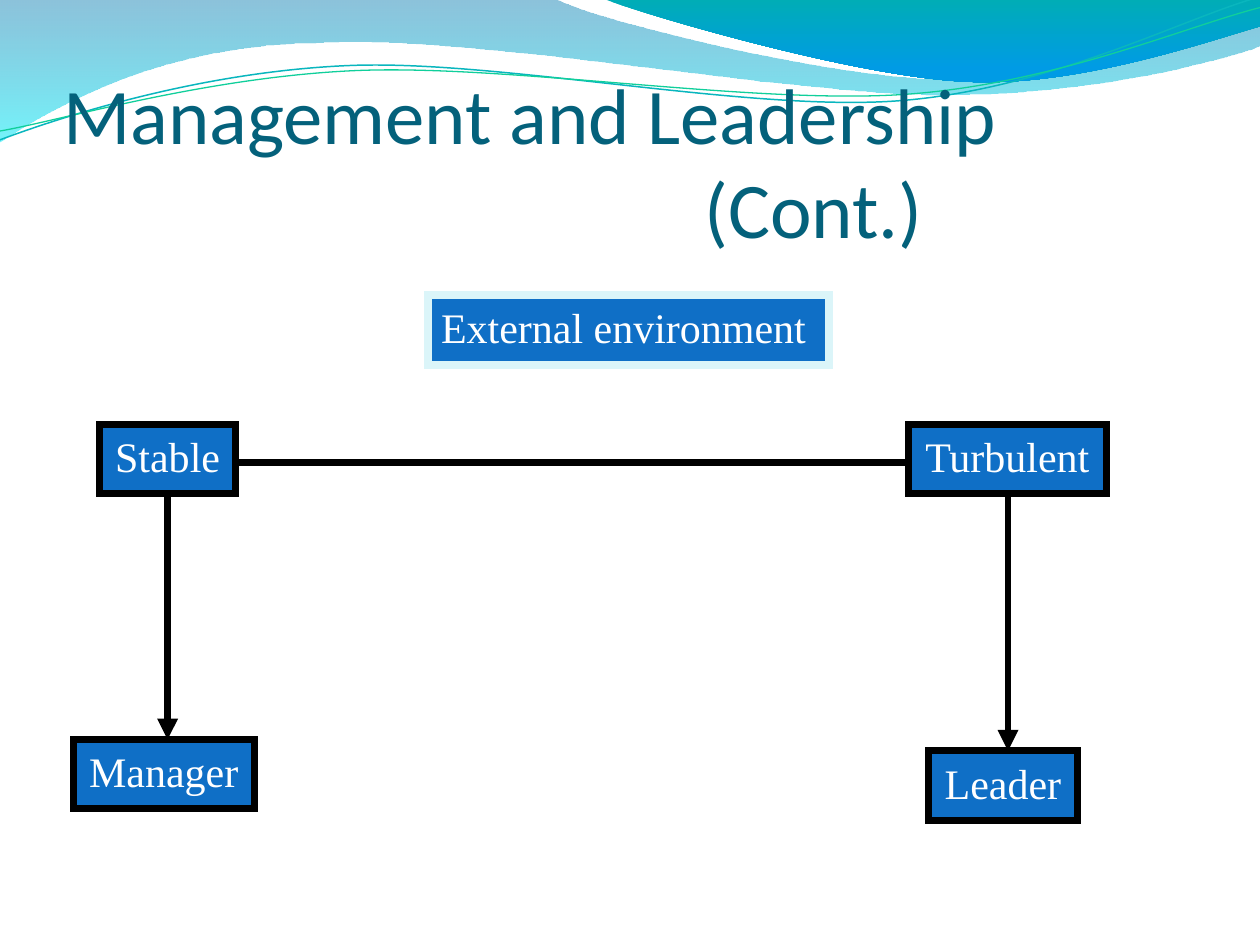
import math
from dataclasses import dataclass

from lxml import etree
from pptx import Presentation, util as u
from pptx.dml.color import RGBColor
from pptx.enum import shapes, text
from pptx.oxml.ns import qn

PX = u.Inches(1) // 100  # 100 px to the inch


@dataclass(frozen=True)
class Theme:
    title: str = "04617B"
    box: str = "0F6FC6"
    pale: str = "DBF5F9"
    ink: str = "000000"
    white: str = "FFFFFF"
    title_font: str = "Calibri"
    box_font: str = "Times New Roman"
    title_size: int = 45
    box_size: int = 24
    line: float = 4


def write(paragraph, content, *, font, size, color, align=text.PP_ALIGN.LEFT):
    paragraph.alignment = align
    run = paragraph.add_run()
    run.text = content
    run.font.name, run.font.size = font, u.Pt(size)
    run.font.color.rgb = RGBColor.from_string(color)


def turn(points, center, degrees):
    """Rotate points clockwise about a center."""
    cx, cy = center
    cos, sin = math.cos(math.radians(degrees)), math.sin(math.radians(degrees))
    return [(cx + (x - cx) * cos - (y - cy) * sin,
             cy + (x - cx) * sin + (y - cy) * cos) for x, y in points]


class SlideBuilder:
    def __init__(self, slide, theme):
        self.slide, self.theme = slide, theme

    def outline(self, points, kinds, closed):
        """Kinds follow the start point: L takes one point, C takes three."""
        points = [(round(x * PX), round(y * PX)) for x, y in points]
        builder = self.slide.shapes.build_freeform(*points[0], scale=1.0)
        builder.add_line_segments(points[1:], close=closed)
        shape = builder.convert_to_shape()
        shape.shadow.inherit = False
        segments = iter(list(shape._element.iter(qn("a:lnTo"))))
        for kind in kinds:
            segment = next(segments)
            if kind == "C":
                segment.tag = qn("a:cubicBezTo")
                for _ in range(2):
                    extra = next(segments)
                    segment.append(extra[0])
                    extra.getparent().remove(extra)
        return shape

    def wave(self, points, kinds, stops):
        """Stops are (position, color, opacity percent)."""
        shape = self.outline(points, kinds, True)
        shape.line.fill.background()
        shape.fill.gradient()
        shape.fill.gradient_angle = 270
        for stop, (position, color, _) in zip(shape.fill.gradient_stops, stops):
            stop.position = position
            stop.color.rgb = RGBColor.from_string(color)
        for color_xml, (_, _, opacity) in zip(
                shape._element.spPr.iter(qn("a:srgbClr")), stops):
            if opacity < 100:
                etree.SubElement(color_xml, qn("a:alpha"), val=str(opacity * 1000))

    def strand(self, points, center, color, width, tilt=-2.7):
        shape = self.outline(turn(points, center, -tilt), "CCC", False)
        shape.rotation = tilt
        shape.fill.background()
        self.stroke(shape, color, width)

    def stroke(self, shape, color, width):
        shape.line.color.rgb = RGBColor.from_string(color)
        shape.line.width = u.Pt(width)

    def title(self, first, second, tab):
        title = self.slide.shapes.title
        title._element.getparent().append(title._element)  # in front of the waves
        title.left, title.top, title.width, title.height = (
            n * PX for n in (50, 77, 908, 125))
        frame = title.text_frame
        frame.word_wrap = True
        frame.auto_size = text.MSO_AUTO_SIZE.NONE
        frame.vertical_anchor = text.MSO_ANCHOR.BOTTOM
        frame.margin_left = frame.margin_right = frame.margin_bottom = 0
        frame.margin_top = 5 * PX
        style = dict(font=self.theme.title_font, size=self.theme.title_size,
                     color=self.theme.title)
        paragraph = frame.paragraphs[0]
        tabs = etree.SubElement(paragraph._p.get_or_add_pPr(), qn("a:tabLst"))
        etree.SubElement(tabs, qn("a:tab"), pos=str(tab * PX), algn="l")
        write(paragraph, first, **style)
        paragraph.add_line_break()
        write(paragraph, "\t" + second, **style)

    def box(self, label, left, top, width, height=55, border=None, weight=None):
        shape = self.slide.shapes.add_shape(
            shapes.MSO_SHAPE.RECTANGLE, *(n * PX for n in (left, top, width, height)))
        shape.shadow.inherit = False
        shape.fill.solid()
        shape.fill.fore_color.rgb = RGBColor.from_string(self.theme.box)
        self.stroke(shape, border or self.theme.ink, weight or self.theme.line)
        etree.SubElement(shape.line._get_or_add_ln(), qn("a:miter"), lim="800000")
        frame = shape.text_frame
        frame.word_wrap = False
        frame.vertical_anchor = text.MSO_ANCHOR.TOP
        write(frame.paragraphs[0], label, font=self.theme.box_font,
              size=self.theme.box_size, color=self.theme.white,
              align=text.PP_ALIGN.CENTER)

    def line(self, x1, y1, x2, y2, arrow=False):
        connector = self.slide.shapes.add_connector(
            shapes.MSO_CONNECTOR.STRAIGHT, *(n * PX for n in (x1, y1, x2, y2)))
        self.stroke(connector, self.theme.ink, self.theme.line)
        if arrow:
            etree.SubElement(connector.line._get_or_add_ln(), qn("a:tailEnd"),
                             type="triangle")
        etree.SubElement(connector._element.spPr, qn("a:effectLst"))


def main():
    presentation = Presentation()
    presentation.slide_width, presentation.slide_height = 1000 * PX, 750 * PX
    theme = Theme()
    builder = SlideBuilder(
        presentation.slides.add_slide(presentation.slide_layouts[5]), theme)

    # Header waves
    builder.wave([(0, -1), (440, -1),
                  (476, 17), (664, 63), (758, 63), (853, 63), (958, 26), (1000, 9),
                  (1001, 36),
                  (983, 44), (870, 76), (746, 75), (622, 75), (382, 28), (257, 34),
                  (129, 35), (46, 83), (-1, 113)],
                 "LCCLCCC", [(0, "0079AF", 45), (1, "00EBF8", 55)])
    builder.wave([(479, -1), (509, 11), (682, 62), (769, 65),
                  (856, 69), (961, 32), (1000, 21), (1000, 0)],
                 "CCL", [(0, "00ADB6", 100), (0.8, "009BE5", 100)])

    # Thin strands over the waves
    builder.strand([(0, 111), (48, 93), (158, 57), (277, 52), (395, 47), (593, 89),
                    (713, 80), (833, 71), (938, 15), (998, -2)],
                   (499, 57.5), "09B6BE", 0.85)
    builder.strand([(0, 104), (47, 96), (164, 61), (283, 56), (403, 51), (597, 83),
                    (717, 75), (836, 67), (941, 21), (1000, 6)],
                   (499.5, 59), "10CF9B", 0.75)

    # Title
    builder.title("Management and Leadership", "(Cont.)", tab=509)

    # Environment scale, from stable to turbulent
    builder.box("External environment ", 340, 234, 318, 56, theme.pale, 4.5)
    builder.box("Stable", 79, 337, 108)
    builder.box("Turbulent", 721, 337, 157)
    builder.line(190, 367, 721, 367)

    # Role that fits each end
    builder.box("Manager", 58, 587, 144)
    builder.box("Leader", 737, 596, 118)
    for x, bottom in ((133, 587), (800, 596)):
        builder.line(x, 392, x, bottom, arrow=True)

    presentation.save("out.pptx")


if __name__ == "__main__":
    main()
